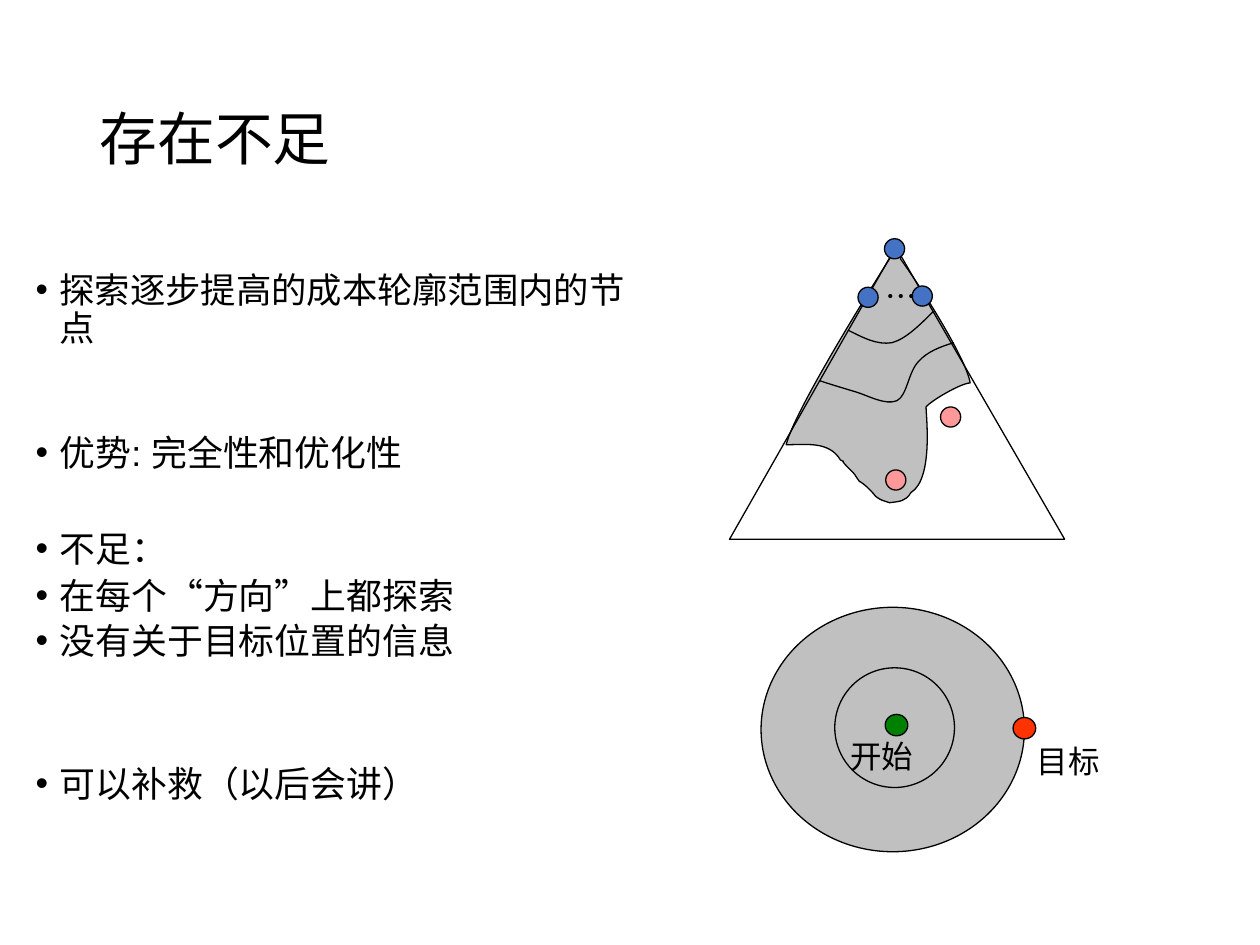
import pptx
import pptx.dml.color
import pptx.enum.shapes
import pptx.enum.text
import pptx.util
from lxml import etree

COLUMNS, ROWS = 100, 75
CELL = pptx.util.Inches(0.1)
CJK, LATIN = "Noto Sans CJK SC", "Arial"
BLACK, GREY, BLUE, PINK, GREEN, RED = "000000", "C0C0C0", "4472C4", "FF9999", "008000", "FF3300"

BULLETS = [
    ("探索逐步提高的成本轮廓范围内的节点", 20.2, 0),
    ("优势: 完全性和优化性", 20.5, 50),
    ("不足：", 20.5, 33),
    ("在每个“方向”上都探索", 20.5, 5),
    ("没有关于目标位置的信息", 20.5, 4.1),
    ("可以补救（以后会讲）", 20.5, 59.5),
]
EXPLORED_REGION = [
    (71.5, 20.6),
    (72.7, 22.2), (76.7, 28.4), (77, 30.4), (76.3, 30.4), (73.9, 31.8), (73.5, 32.3),
    (73.5, 33), (74.1, 38), (72.3, 39.1), (71.9, 39.8), (71.4, 39.8), (70.6, 39.9),
    (70, 39.7), (69.9, 39.7), (69.5, 39.4), (69.2, 39), (68.6, 38.4), (68.2, 38.2),
    (67.7, 37.5), (68, 37.8), (67.4, 37.2), (66.3, 36.1), (67.4, 36.9), (66.7, 36.5),
    (65.8, 35), (64, 35.3), (62.4, 35.3), (63, 32.7), (69, 23.1), (70.5, 20.7),
    (72.1, 18.2), (71.3, 20.6), (71.5, 20.6),
]
TRIANGLE = [(57.9, 42.8), (84.5, 42.8), (71.1, 19.6)]
LOWER_CONTOUR = [
    (75.7, 27.2), (74.7, 27.5), (73.6, 27.9), (72.9, 28.7), (72.1, 29.5), (72, 31.4), (71.2, 31.8),
    (70.3, 32.2), (68.9, 31.4), (67.9, 31.1), (66.9, 30.8), (65.9, 30.5), (65, 30.2),
]
UPPER_CONTOUR = [
    (74.1, 24.7), (73, 25.8), (71.9, 26.9), (70.8, 27.2), (69.6, 27.4), (68.5, 26.8), (67.3, 26.2),
]


def cells(*lengths):
    """Turn grid lengths into slide units."""
    return [round(length * CELL) for length in lengths]


def color(code):
    """Turn a hex string into a colour."""
    return pptx.dml.color.RGBColor.from_string(code)


def assign(target, values):
    """Set the attributes of a target from a dict."""
    for name, value in values.items():
        setattr(target, name, value)


def write(para, text, size, font=CJK):
    """Add one formatted span of text to a paragraph."""
    span = para.add_run()
    span.text = text
    assign(span.font, {"size": pptx.util.Pt(size), "name": font})
    span.font.color.rgb = color(BLACK)
    east_asian = etree.SubElement(span.font._element, pptx.oxml.ns.qn("a:ea"))
    east_asian.set("typeface", CJK)


def paint(shape, fill=None):
    """Give a shape its fill and a thin black outline."""
    shape.shadow.inherit = False
    if fill:
        shape.fill.solid()
        shape.fill.fore_color.rgb = color(fill)
    else:
        shape.fill.background()
    shape.line.color.rgb = color(BLACK)
    shape.line.width = pptx.util.Pt(0.75)


def add_ellipse(page, center_x, center_y, width, height, fill=None):
    """Draw an ellipse around a centre."""
    corner = (center_x - width / 2, center_y - height / 2)
    oval = pptx.enum.shapes.MSO_SHAPE.OVAL
    paint(page.shapes.add_shape(oval, *cells(*corner, width, height)), fill)


def add_nodes(page, centers, fill):
    """Draw equal round tree nodes."""
    for center in centers:
        add_ellipse(page, *center, 1.6, 1.6, fill)


def add_outline(page, points, fill=None, close=False):
    """Draw a freeform with straight sides."""
    first, *others = [cells(*point) for point in points]
    builder = page.shapes.build_freeform(*first)
    builder.add_line_segments(others, close=close)
    shape = builder.convert_to_shape()
    paint(shape, fill)
    return shape


def add_curve(page, points, fill=None, close=False):
    """Draw a freeform whose points after the first form cubic curves."""
    shape = add_outline(page, points, fill, close)
    sides = list(shape._element.iter(pptx.oxml.ns.qn("a:lnTo")))[:len(points) - 1]
    for start in range(0, len(sides), 3):
        curve = etree.Element(pptx.oxml.ns.qn("a:cubicBezTo"))
        sides[start].addprevious(curve)
        for side in sides[start:start + 3]:
            curve.append(side[0])
            side.getparent().remove(side)


def add_label(page, text, left, top, width=10):
    """Add a short text label."""
    frame = page.shapes.add_textbox(*cells(left, top, width, 4)).text_frame
    frame.word_wrap = True
    write(frame.paragraphs[0], text, 18)


def add_title(page, text):
    """Place and fill the title placeholder."""
    title = page.shapes.title
    left, top, width, height = cells(6.9, 4, 86.2, 14.5)
    assign(title, {"left": left, "top": top, "width": width, "height": height})
    title.text_frame.vertical_anchor = pptx.enum.text.MSO_ANCHOR.MIDDLE
    para = title.text_frame.paragraphs[0]
    assign(para, {"alignment": pptx.enum.text.PP_ALIGN.LEFT, "line_spacing": 0.9})
    write(para, text, 33)


def add_bullets(page, items):
    """Add the bulleted text column."""
    frame = page.shapes.add_textbox(*cells(1.85, 21.1, 50, 49.5)).text_frame
    frame.word_wrap = True
    for index, (text, size, before) in enumerate(items):
        para = frame.add_paragraph() if index else frame.paragraphs[0]
        spacing = {"line_spacing": pptx.util.Pt(21.8), "space_before": pptx.util.Pt(before)}
        assign(para, spacing)
        properties = para._p.get_or_add_pPr()
        indent = cells(1.9)[0]
        properties.set("marL", str(indent))
        properties.set("indent", str(-indent))
        for tag, name, value in (("a:buFont", "typeface", LATIN), ("a:buChar", "char", "•")):
            etree.SubElement(properties, pptx.oxml.ns.qn(tag)).set(name, value)
        write(para, text, size, LATIN)


def add_cost_circles(page):
    """Draw the cost contours around the start."""
    add_ellipse(page, 70.85, 57.9, 20.9, 19.4, GREY)
    add_ellipse(page, 71.15, 57.55, 1.8, 1.7, GREEN)
    add_label(page, "开始", 66.5, 58)
    add_ellipse(page, 81.3, 57.8, 1.8, 1.7, RED)
    add_ellipse(page, 71, 57.75, 9.5, 9.5)
    add_label(page, "目标", 81.3, 58.4)


def add_search_tree(page):
    """Draw the search tree with its explored region."""
    add_curve(page, EXPLORED_REGION, GREY, close=True)
    add_outline(page, TRIANGLE, close=True)
    add_nodes(page, [(68.9, 23.6), (73.2, 23.5)], BLUE)
    add_label(page, "…", 69.3, 21.5, 2.5)
    add_nodes(page, [(75.45, 33.1), (71.1, 38.1)], PINK)
    add_nodes(page, [(71, 19.75)], BLUE)
    add_curve(page, LOWER_CONTOUR)
    add_curve(page, UPPER_CONTOUR)


def main():
    """Build and save the slide."""
    deck = pptx.Presentation()
    width, height = cells(COLUMNS, ROWS)
    assign(deck, {"slide_width": width, "slide_height": height})
    page = deck.slides.add_slide(deck.slide_layouts[5])
    add_title(page, "存在不足")
    add_bullets(page, BULLETS)
    add_cost_circles(page)
    add_search_tree(page)
    deck.save("out.pptx")


if __name__ == "__main__":
    main()
